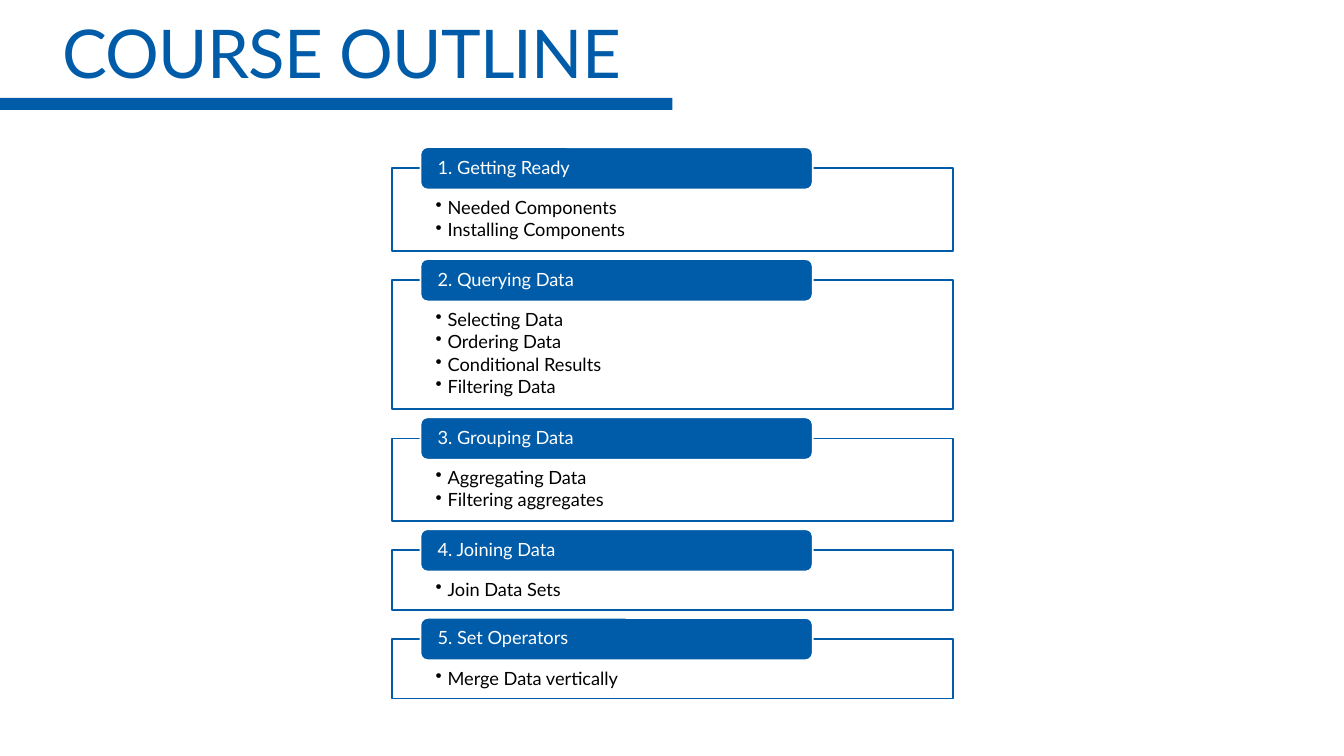
from pptx import Presentation
from pptx.dml.color import RGBColor
from pptx.enum.shapes import MSO_SHAPE
from pptx.enum.text import MSO_ANCHOR, PP_ALIGN
from pptx.oxml.ns import qn
from pptx.util import Inches, Pt
from lxml.etree import SubElement

TITLE = "COURSE OUTLINE"
SECTIONS = [
    ("1. Getting Ready", ["Needed Components", "Installing Components"]),
    ("2. Querying Data", ["Selecting Data", "Ordering Data", "Conditional Results", "Filtering Data"]),
    ("3. Grouping Data", ["Aggregating Data", "Filtering aggregates"]),
    ("4. Joining Data", ["Join Data Sets"]),
    ("5. Set Operators", ["Merge Data vertically"]),
]
COLORS = {"blue": "005CA8", "white": "FFFFFF", "black": "000000"}
FONT = "Lato"

FIRST_TOP = 1.67
BOX_LEFT, BOX_WIDTH = 3.89, 5.56
BOX_PADDING, ITEM_HEIGHT, BOX_GAP = 0.36, 0.23, 0.29
HEADER_LEFT, HEADER_WIDTH, HEADER_HEIGHT = 4.17, 3.89, 0.42


def color(name):
    return RGBColor.from_string(COLORS[name])


def add_box(slide, kind, bounds, fill, line=None):
    shape = slide.shapes.add_shape(kind, *[Inches(value) for value in bounds])
    shape.shadow.inherit = False
    shape.fill.solid()
    shape.fill.fore_color.rgb = color(fill)
    if line:
        shape.line.color.rgb = color(line)
        shape.line.width = Pt(1.25)
    else:
        shape.line.fill.background()
    return shape


def set_frame(shape, anchor, left, top, right, bottom):
    frame = shape.text_frame
    frame.word_wrap = True
    frame.vertical_anchor = anchor
    frame.margin_left, frame.margin_top = Inches(left), Inches(top)
    frame.margin_right, frame.margin_bottom = Inches(right), Inches(bottom)
    return frame


def write(paragraph, text, size, font_color, space_after=0):
    paragraph.alignment = PP_ALIGN.LEFT
    paragraph.line_spacing = 0.9
    paragraph.space_after = Pt(space_after)
    run = paragraph.add_run()
    run.text = text
    run.font.name = FONT
    run.font.size = Pt(size)
    run.font.color.rgb = color(font_color)
    return run


def add_bullet(paragraph):
    properties = paragraph._p.get_or_add_pPr()
    properties.set("marL", str(Inches(0.12)))
    properties.set("indent", str(Inches(-0.12)))
    SubElement(properties, qn("a:buChar")).set("char", "•")


def add_title(slide):
    add_box(slide, MSO_SHAPE.RECTANGLE, (0, 0.97, 6.67, 0.12), "blue")
    title = slide.shapes.add_textbox(Inches(0.36), 0, Inches(10.91), Inches(0.97))
    frame = set_frame(title, MSO_ANCHOR.BOTTOM, 0.26, 0.05, 0.1, 0.05)
    run = write(frame.paragraphs[0], TITLE, 48, "blue", 2)
    run.font._element.set("spc", "-50")


def add_section(slide, top, heading, items):
    height = BOX_PADDING + ITEM_HEIGHT * len(items)
    box = add_box(slide, MSO_SHAPE.RECTANGLE, (BOX_LEFT, top, BOX_WIDTH, height), "white", "blue")
    frame = set_frame(box, MSO_ANCHOR.TOP, 0.43, 0.3, 0.43, 0.1)
    for index, item in enumerate(items):
        paragraph = frame.add_paragraph() if index else frame.paragraphs[0]
        add_bullet(paragraph)
        write(paragraph, item, 13, "black", 2)

    header_bounds = (HEADER_LEFT, top - HEADER_HEIGHT / 2, HEADER_WIDTH, HEADER_HEIGHT)
    header = add_box(slide, MSO_SHAPE.ROUNDED_RECTANGLE, header_bounds, "blue", "white")
    frame = set_frame(header, MSO_ANCHOR.MIDDLE, 0.15, 0, 0.15, 0)
    write(frame.paragraphs[0], heading, 13, "white")
    return top + height + BOX_GAP


def main():
    presentation = Presentation()
    presentation.slide_width = Inches(13.33)
    presentation.slide_height = Inches(7.5)
    slide = presentation.slides.add_slide(presentation.slide_layouts[6])
    add_title(slide)
    top = FIRST_TOP
    for heading, items in SECTIONS:
        top = add_section(slide, top, heading, items)
    presentation.save("out.pptx")


if __name__ == "__main__":
    main()
